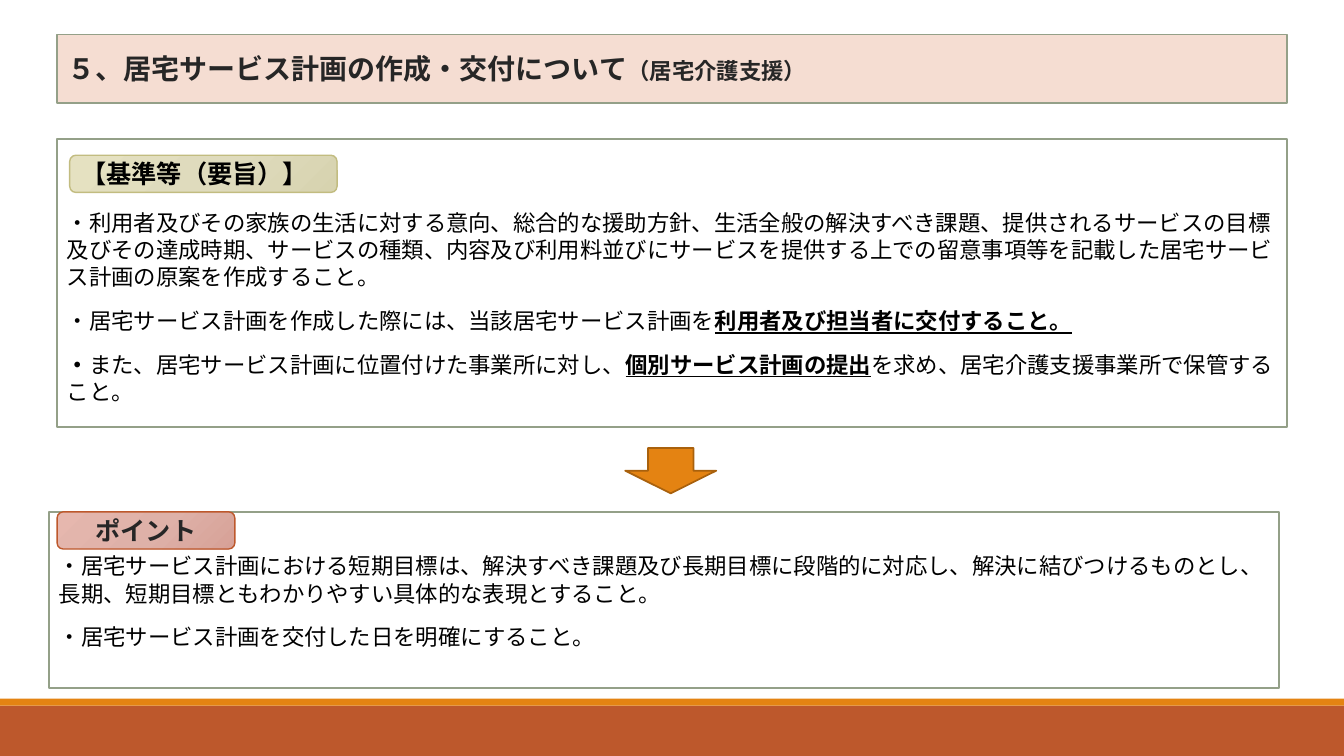
from lxml import etree
from pptx import Presentation
from pptx.dml.color import RGBColor
from pptx.enum.lang import MSO_LANGUAGE_ID as LANG
from pptx.enum.shapes import MSO_SHAPE as SHAPE
from pptx.enum.text import MSO_ANCHOR as ANCHOR, MSO_AUTO_SIZE as AUTOSIZE, PP_ALIGN as ALIGN
from pptx.oxml import parse_xml
from pptx.oxml.ns import nsdecls, qn
from pptx.util import Pt

FONT = "Noto Sans CJK JP"
COLORS = {
    "white": "FFFFFF", "black": "000000", "dark": "262626",
    "rust": "BD582C", "orange": "E48312", "brown": "A9610D",
    "sage": "94A088", "peach": "F5DDD2", "olive": "C2BC80",
}
GRADIENTS = {
    "rust": ("D7A197", "DEB1A8", "E6B7AE"),
    "olive": ("D7D3AF", "DFDBBD", "E5E1C1"),
}

# Each paragraph is a list of (text, bold, underline).
STANDARDS = [
    [("・利用者及びその家族の生活に対する意向、総合的な援助方針、生活全般の解決すべき課題、"
      "提供されるサービスの目標及びその達成時期、サービスの種類、内容及び利用料並びに"
      "サービスを提供する上での留意事項等を記載した居宅サービス計画の原案を作成すること。", False, False)],
    [("・居宅サービス計画を作成した際には、当該居宅サービス計画を", False, False),
     ("利用者及び担当者に交付すること。", True, True)],
    [("・", True, False),
     ("また、居宅サービス計画に位置付けた事業所に対し、", False, False),
     ("個別サービス計画の提出", True, True),
     ("を求め、居宅介護支援事業所で保管すること。", False, False)],
]
POINTS = [
    [("・居宅サービス計画における短期目標は、解決すべき課題及び長期目標に段階的に対応し、"
      "解決に結びつけるものとし、長期、短期目標ともわかりやすい具体的な表現とすること。", False, False)],
    [("・居宅サービス計画を交付した日を明確にすること。", False, False)],
]


def rgb(name):
    return RGBColor.from_string(COLORS[name])


def paint(sp, fill, line=None, width=1.25):
    sp.fill.solid()
    sp.fill.fore_color.rgb = rgb(fill)
    if line:
        sp.line.color.rgb = rgb(line)
        sp.line.width = Pt(width)
    else:
        sp.line.fill.background()


def add_shape(slide, kind, box, fill, line=None, width=1.25):
    sp = slide.shapes.add_shape(kind, *map(Pt, box))
    sp.shadow.inherit = False
    paint(sp, fill, line, width)
    return sp


def add_run(p, text, size, color, bold=False, underline=False):
    r = p.add_run()
    r.text = text
    font = r.font
    font.size, font.bold, font.underline = Pt(size), bold, underline
    font.name, font.language_id = FONT, LANG.JAPANESE
    font.color.rgb = rgb(color)
    etree.SubElement(r._r.rPr, qn("a:ea")).set("typeface", FONT)


def fill_radial(sp, stops):
    """Fill with a gradient spreading from the lower right corner."""
    gs = "".join(f'<a:gs pos="{pos}"><a:srgbClr val="{color}"/></a:gs>'
                 for pos, color in zip((0, 45000, 100000), stops))
    grad = parse_xml(
        f'<a:gradFill {nsdecls("a")} rotWithShape="1"><a:gsLst>{gs}</a:gsLst>'
        '<a:path path="circle"><a:fillToRect l="100000" t="100000"/></a:path></a:gradFill>')
    solid = sp._element.spPr.find(qn("a:solidFill"))
    solid.getparent().replace(solid, grad)


def add_title(slide, box):
    sp = slide.shapes.title
    sp.left, sp.top, sp.width, sp.height = map(Pt, box)
    paint(sp, "peach", "sage", 1)
    tf = sp.text_frame
    tf.word_wrap, tf.auto_size = True, AUTOSIZE.NONE
    tf.vertical_anchor = ANCHOR.MIDDLE
    p = tf.paragraphs[0]
    p.alignment = ALIGN.LEFT
    add_run(p, "５、居宅サービス計画の作成・交付について", 20, "dark", True)
    add_run(p, "（居宅介護支援）", 16, "dark", True)


def add_label(slide, box, text, theme, color, align):
    sp = add_shape(slide, SHAPE.ROUNDED_RECTANGLE, box, "white", theme, 1)
    fill_radial(sp, GRADIENTS[theme])
    tf = sp.text_frame
    tf.word_wrap, tf.vertical_anchor = True, ANCHOR.MIDDLE
    p = tf.paragraphs[0]
    p.alignment = align
    add_run(p, text, 18, color, True)


def add_panel(slide, box, paragraphs, text_top):
    """Draw a bordered box whose text starts text_top points below its top edge."""
    sp = add_shape(slide, SHAPE.RECTANGLE, box, "white", "sage")
    tf = sp.text_frame
    tf.word_wrap, tf.vertical_anchor = True, ANCHOR.TOP
    tf.margin_top = Pt(text_top)
    for i, runs in enumerate(paragraphs):
        p = tf.paragraphs[0] if i == 0 else tf.add_paragraph()
        p.alignment = ALIGN.LEFT
        p.line_spacing = Pt(19.3)
        p.space_before, p.space_after = Pt(6 if i else 0), Pt(6)
        for text, bold, underline in runs:
            add_run(p, text, 16, "black", bold, underline)


def add_standards(slide, box):
    x, y, _, _ = box
    add_panel(slide, box, STANDARDS, 50)
    add_label(slide, (x + 9, y + 11.5, 191, 26.6), "【基準等（要旨）】",
              "olive", "black", ALIGN.LEFT)


def add_points(slide, box):
    x, y, _, _ = box
    add_panel(slide, box, POINTS, 29)
    add_label(slide, (x + 5.8, y, 127, 26.6), "ポイント", "rust", "dark", ALIGN.CENTER)


def add_footer(slide, box):
    x, y, w, h = box
    stripe = 5
    add_shape(slide, SHAPE.RECTANGLE, (x, y + stripe, w, h - stripe), "rust")
    add_shape(slide, SHAPE.RECTANGLE, (x, y, w, stripe), "orange")


def main():
    prs = Presentation()
    prs.slide_width, prs.slide_height = Pt(960), Pt(540)
    slide = prs.slides.add_slide(prs.slide_layouts[5])
    left, width = 40.8, 878.5
    add_footer(slide, (0, 499, 960, 41))
    add_title(slide, (left, 24.6, width, 49))
    add_standards(slide, (left, 99.4, width, 205.6))
    add_shape(slide, SHAPE.DOWN_ARROW, (446.6, 320, 65, 32.4), "orange", "brown")
    add_points(slide, (left - 5.8, 365.6, width, 126))
    prs.save("out.pptx")


if __name__ == "__main__":
    main()
